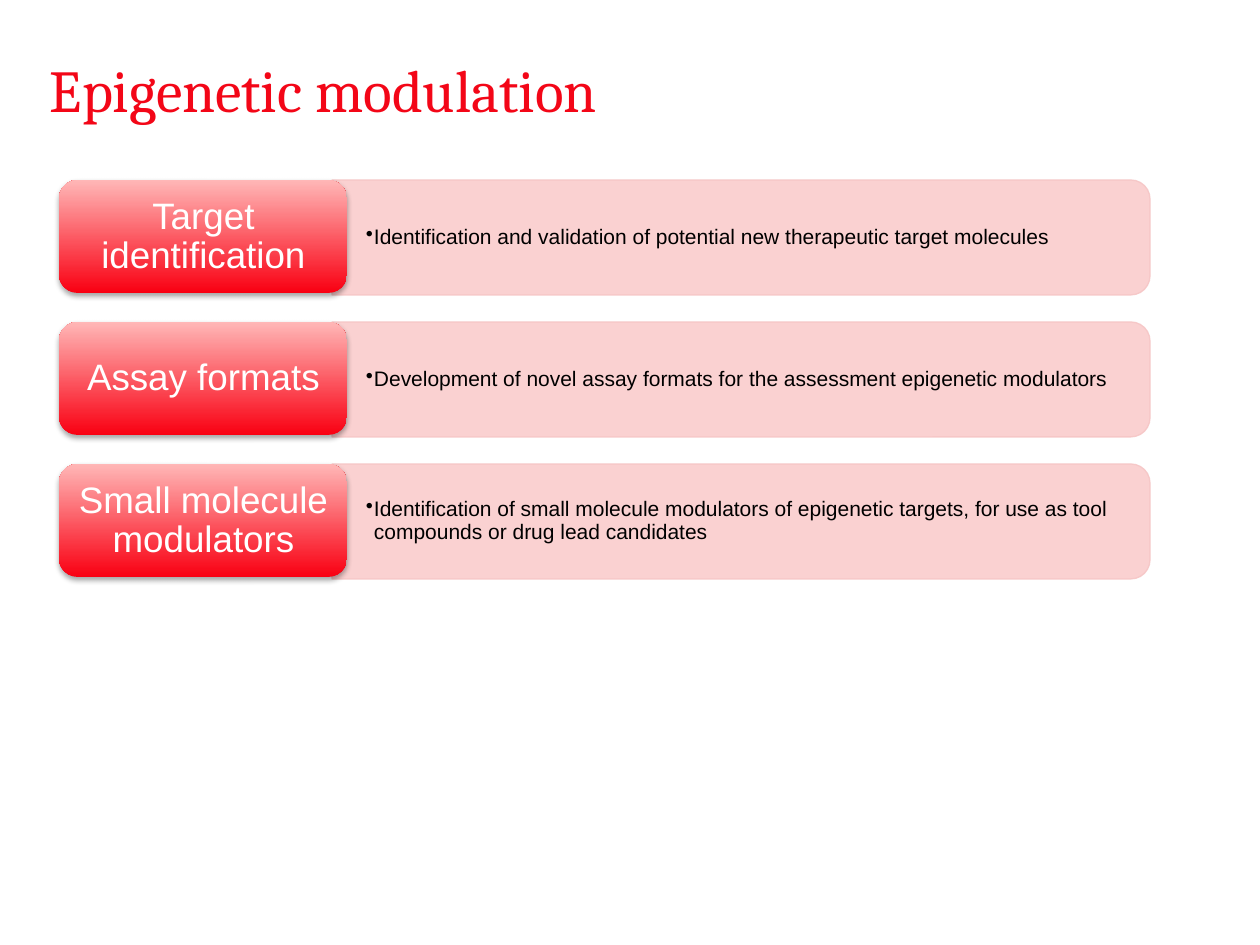
import pptx
import pptx.util
import pptx.dml.color
import pptx.enum.shapes
import pptx.enum.text
import pptx.oxml
import pptx.oxml.ns
from dataclasses import dataclass
from lxml import etree

PX = 914400 / 126
SHAPE = pptx.enum.shapes.MSO_SHAPE
ALIGN = pptx.enum.text.PP_ALIGN
ANCHOR = pptx.enum.text.MSO_ANCHOR
qn = pptx.oxml.ns.qn
rgb = pptx.dml.color.RGBColor.from_string


@dataclass(frozen=True)
class Theme:
    title: str = "F30617"
    bar: str = "FACCCC"
    bar_line: str = "F6C6C6"
    card_bottom: str = "F90012"
    card_top: str = "FFB7B7"
    body: str = "000000"
    label: str = "FFFFFF"
    title_font: str = "Cambria"
    body_font: str = "Arial"
    title_size: int = 34
    label_size: int = 21
    body_size: int = 12


theme = Theme()


def emu(*px):
    return [round(v * PX) for v in px]


def add_text(box, text, font, size, color, inset=(0, 0), anchor=ANCHOR.TOP):
    """Add a one-run text box; inset is (horizontal, vertical). Returns its paragraph."""
    tf = slide.shapes.add_textbox(*emu(*box)).text_frame
    tf.word_wrap = True
    tf.vertical_anchor = anchor
    tf.margin_left = tf.margin_right = emu(inset[0])[0]
    tf.margin_top = tf.margin_bottom = emu(inset[1])[0]
    p = tf.paragraphs[0]
    r = p.add_run()
    r.text = text
    r.font.name = font
    r.font.size = pptx.util.Pt(size)
    r.font.color.rgb = rgb(color)
    return p


prs = pptx.Presentation()
prs.slide_width, prs.slide_height = emu(1260, 945)
slide = prs.slides.add_slide(prs.slide_layouts[6])

add_text((50, 53, 1134, 78), "Epigenetic modulation",
         theme.title_font, theme.title_size, theme.title)

rows = [
    ("Target identification",
     "Identification and validation of potential new therapeutic target molecules"),
    ("Assay formats",
     "Development of novel assay formats for the assessment epigenetic modulators"),
    ("Small molecule modulators",
     "Identification of small molecule modulators of epigenetic targets, "
     "for use as tool compounds or drug lead candidates"),
]
TOP, PITCH = 180, 142
BAR_LEFT, BAR_W, BAR_H = 332, 818, 115

for i, (label, detail) in enumerate(rows):
    y = TOP + i * PITCH

    # The bar stands upright and is turned so its rounded end points right
    bar = slide.shapes.add_shape(
        SHAPE.ROUND_2_SAME_RECTANGLE,
        *emu(BAR_LEFT + (BAR_W - BAR_H) / 2, y + (BAR_H - BAR_W) / 2, BAR_H, BAR_W))
    bar.rotation = 90
    bar.shadow.inherit = False
    bar.fill.solid()
    bar.fill.fore_color.rgb = rgb(theme.bar)
    bar.line.color.rgb = rgb(theme.bar_line)
    bar.line.width = pptx.util.Pt(0.75)
    for color in bar.element.spPr.iter(qn("a:srgbClr")):
        etree.SubElement(color, qn("a:alpha"), val="90000")

    p = add_text((332, y + 6, 814, 103), detail, theme.body_font, theme.body_size,
                 theme.body, (34, 18), ANCHOR.MIDDLE)
    p.level = 1
    p.line_spacing = 0.9
    pPr = p._p.get_or_add_pPr()
    indent = emu(8)[0]
    pPr.set("marL", str(indent))
    pPr.set("indent", str(-indent))
    etree.SubElement(pPr, qn("a:buChar"), char="•")

    card = slide.shapes.add_shape(SHAPE.ROUNDED_RECTANGLE, *emu(59, y, 288, 113))
    card.fill.gradient()
    card.fill.gradient_angle = 90
    for stop, color in zip(card.fill.gradient_stops, (theme.card_bottom, theme.card_top)):
        stop.color.rgb = rgb(color)
    card.line.fill.background()
    card.shadow.inherit = False
    shadow = etree.SubElement(
        card.element.spPr.find(qn("a:effectLst")), qn("a:outerShdw"),
        blurRad=str(pptx.util.Pt(3.1)), dist=str(pptx.util.Pt(1.8)),
        dir="5400000", rotWithShape="0")
    color = etree.SubElement(shadow, qn("a:srgbClr"), val="000000")
    etree.SubElement(color, qn("a:alpha"), val="35000")

    p = add_text((65, y + 6, 277, 102), label, theme.body_font, theme.label_size,
                 theme.label, (11, 5), ANCHOR.MIDDLE)
    p.alignment = ALIGN.CENTER
    p.line_spacing = 0.9

prs.save("out.pptx")
